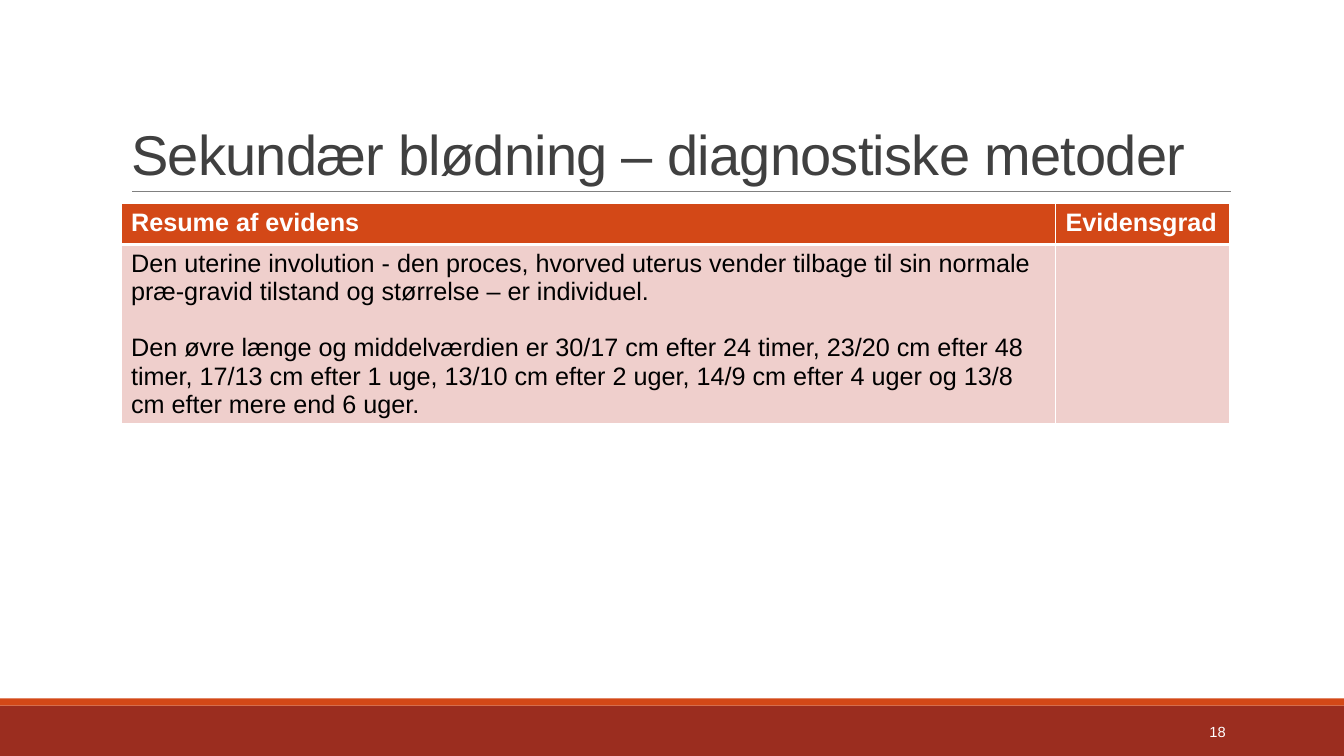
import dataclasses
import typing

import lxml.etree
import pptx
import pptx.dml.color
import pptx.enum.shapes
import pptx.enum.text
import pptx.oxml.ns
import pptx.util

Cm = pptx.util.Cm
Pt = pptx.util.Pt
RGB = pptx.dml.color.RGBColor
qn = pptx.oxml.ns.qn


@dataclasses.dataclass(frozen=True)
class Theme:
    font: str = "Arial"
    title: RGB = RGB(0x40, 0x40, 0x40)
    rule: RGB = RGB(0x80, 0x80, 0x80)
    accent: RGB = RGB(0xD3, 0x48, 0x17)
    dark: RGB = RGB(0x9B, 0x2D, 0x1F)
    tint: RGB = RGB(0xEF, 0xCF, 0xCC)
    white: RGB = RGB(0xFF, 0xFF, 0xFF)
    black: RGB = RGB(0, 0, 0)
    title_size: float = 40
    body_size: float = 18
    number_size: float = 10.5
    paragraph_gap: float = 20


@dataclasses.dataclass(frozen=True)
class Band:
    top: float
    height: float
    color: RGB


@dataclasses.dataclass(frozen=True)
class Row:
    height: float
    cells: tuple[tuple[str, ...], ...]
    fill: RGB
    color: RGB
    bold: bool
    top_border: float
    bottom_border: float


THEME = Theme()
WIDTH, HEIGHT = 33.87, 19.05
LEFT, CONTENT_WIDTH = 3.05, 27.94
COLUMNS = (23.55, 4.39)

BANDS = (
    Band(17.78, 1.27, THEME.dark),
    Band(17.6, 0.18, THEME.accent),
)

ROWS = (
    Row(1.03, (("Resume af evidens",), ("Evidensgrad",)),
        THEME.accent, THEME.white, True, 1, 3),
    Row(4.5, ((
        "Den uterine involution - den proces, hvorved uterus vender tilbage "
        "til sin normale præ-gravid tilstand og størrelse – er individuel.",
        "Den øvre længe og middelværdien er 30/17 cm efter 24 timer, 23/20 cm "
        "efter 48 timer, 17/13 cm efter 1 uge, 13/10 cm efter 2 uger, 14/9 cm "
        "efter 4 uger og 13/8 cm efter mere end 6 uger.",
    ), ()), THEME.tint, THEME.black, False, 3, 1),
)


def add_run(p: typing.Any, text: str, size: float, color: RGB,
            bold: bool = False) -> typing.Any:
    r = p.add_run()
    r.text = text
    r.font.name = THEME.font
    r.font.size = Pt(size)
    r.font.bold = bold
    r.font.color.rgb = color
    return r


def add_band(s: typing.Any, band: Band) -> None:
    sp = s.shapes.add_shape(pptx.enum.shapes.MSO_SHAPE.RECTANGLE, 0,
                            Cm(band.top), Cm(WIDTH), Cm(band.height))
    sp.shadow.inherit = False
    sp.fill.solid()
    sp.fill.fore_color.rgb = band.color
    sp.line.fill.background()


def add_rule(s: typing.Any) -> None:
    line = s.shapes.add_connector(pptx.enum.shapes.MSO_CONNECTOR.STRAIGHT,
                                  Cm(3.33), Cm(4.83), Cm(31.01), Cm(4.83))
    line.line.color.rgb = THEME.rule
    line.line.width = Pt(0.5)
    sp_pr = line._element.spPr
    lxml.etree.SubElement(sp_pr, qn("a:effectLst"))


def format_title(s: typing.Any, text: str) -> None:
    sp = s.shapes.title
    sp.left, sp.top, sp.width, sp.height = (
        Cm(LEFT), Cm(0.79), Cm(CONTENT_WIDTH), Cm(4.04))
    tf = sp.text_frame
    tf.word_wrap = True
    tf.auto_size = pptx.enum.text.MSO_AUTO_SIZE.NONE
    tf.vertical_anchor = pptx.enum.text.MSO_ANCHOR.BOTTOM
    p = tf.paragraphs[0]
    p.alignment = pptx.enum.text.PP_ALIGN.LEFT
    p.line_spacing = 0.85
    r = add_run(p, text, THEME.title_size, THEME.title)
    r.font._element.set("spc", "-50")


def set_borders(cell: typing.Any, row: Row) -> None:
    tc_pr = cell._tc.get_or_add_tcPr()
    widths = {"lnL": 1, "lnR": 1, "lnT": row.top_border, "lnB": row.bottom_border}
    for i, (side, width) in enumerate(widths.items()):
        ln = lxml.etree.Element(qn(f"a:{side}"), w=str(Pt(width)))
        fill = lxml.etree.SubElement(ln, qn("a:solidFill"))
        lxml.etree.SubElement(fill, qn("a:srgbClr"), val=str(THEME.white))
        tc_pr.insert(i, ln)


def fill_cell(cell: typing.Any, row: Row, texts: tuple[str, ...]) -> None:
    cell.fill.solid()
    cell.fill.fore_color.rgb = row.fill
    set_borders(cell, row)
    tf = cell.text_frame
    for i, text in enumerate(texts):
        p = tf.add_paragraph() if i else tf.paragraphs[0]
        if i:
            p.space_before = Pt(THEME.paragraph_gap)
        add_run(p, text, THEME.body_size, row.color, row.bold)


def add_evidence_table(s: typing.Any) -> None:
    frame = s.shapes.add_table(
        len(ROWS), len(COLUMNS), Cm(LEFT), Cm(5.13),
        Cm(CONTENT_WIDTH), Cm(sum(row.height for row in ROWS)))
    table = frame.table
    table.horz_banding = False
    for column, width in zip(table.columns, COLUMNS):
        column.width = Cm(width)
    for i, row in enumerate(ROWS):
        table.rows[i].height = Cm(row.height)
        for j, texts in enumerate(row.cells):
            fill_cell(table.cell(i, j), row, texts)


def add_slide_number(s: typing.Any, number: str) -> None:
    sp = s.shapes.add_textbox(Cm(27.51), Cm(17.93), Cm(3.63), Cm(1.02))
    tf = sp.text_frame
    tf.word_wrap = True
    tf.vertical_anchor = pptx.enum.text.MSO_ANCHOR.MIDDLE
    p = tf.paragraphs[0]
    p.alignment = pptx.enum.text.PP_ALIGN.RIGHT
    add_run(p, number, THEME.number_size, THEME.white)


def main() -> None:
    prs = pptx.Presentation()
    prs.slide_width, prs.slide_height = Cm(WIDTH), Cm(HEIGHT)
    s = prs.slides.add_slide(prs.slide_layouts.get_by_name("Title Only"))
    for band in BANDS:
        add_band(s, band)
    add_rule(s)
    format_title(s, "Sekundær blødning – diagnostiske metoder")
    add_evidence_table(s)
    add_slide_number(s, "18")
    prs.save("out.pptx")


if __name__ == "__main__":
    main()
